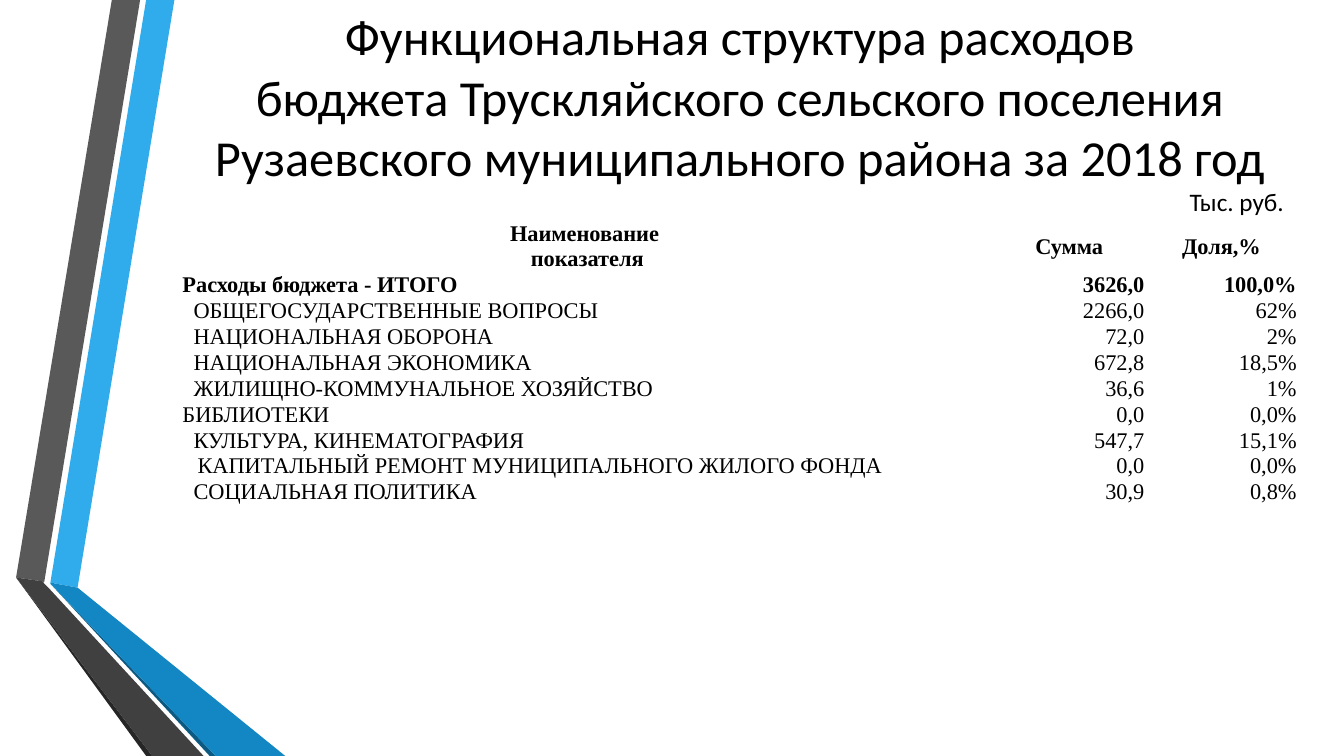
from lxml.etree import SubElement
from pptx import Presentation
from pptx.dml.color import RGBColor as Rgb
from pptx.enum.text import MSO_ANCHOR as Anchor, MSO_AUTO_SIZE as Auto, PP_ALIGN as Align
from pptx.oxml.ns import qn
from pptx.util import Inches, Pt

BLACK = Rgb(0, 0, 0)
SKY = Rgb(0x30, 0xAC, 0xEC)
BLUE = Rgb(0x12, 0x87, 0xC3)
NAVY = Rgb(0x0C, 0x5A, 0x82)
GRAY = Rgb(0x59, 0x59, 0x59)
DARK = Rgb(0x40, 0x40, 0x40)
COAL = Rgb(0x26, 0x26, 0x26)
WHITE = Rgb(0xFF, 0xFF, 0xFF)

BANDS = [
    (SKY, [(0.5, 5.78), (0.77, 5.83), (1.73, 0), (1.45, 0)]),
    (GRAY, [(1.39, 0), (1.11, 0), (0.16, 5.73), (0.44, 5.77)]),
    (COAL, [(0.16, 5.73), (1.45, 7.5), (1.51, 7.5)]),
    (NAVY, [(0.5, 5.79), (2.08, 7.5), (2.14, 7.5)]),
    (BLUE, [(0.5, 5.79), (2.14, 7.5), (2.83, 7.5), (0.77, 5.83), (0.5, 5.78)]),
    (DARK, [(2.02, 7.5), (0.48, 5.83), (0.43, 5.78), (0.44, 5.77), (0.16, 5.73), (1.51, 7.5)]),
]

TITLE = [
    "Функциональная структура расходов",
    "бюджета Трускляйского сельского поселения Рузаевского муниципального района за 2018 год",
]

HEAD = ["Наименование \nпоказателя", "Сумма", "Доля,%"]
FLUSH, STEP, DEEP = 0.01, 0.12, 0.16
ROWS = [
    (FLUSH, "Расходы бюджета - ИТОГО", "3626,0", "100,0%"),
    (STEP, "ОБЩЕГОСУДАРСТВЕННЫЕ ВОПРОСЫ", "2266,0", "62%"),
    (STEP, "НАЦИОНАЛЬНАЯ ОБОРОНА", "72,0", "2%"),
    (STEP, "НАЦИОНАЛЬНАЯ ЭКОНОМИКА", "672,8", "18,5%"),
    (STEP, "ЖИЛИЩНО-КОММУНАЛЬНОЕ ХОЗЯЙСТВО", "36,6", "1%"),
    (FLUSH, "БИБЛИОТЕКИ", "0,0", "0,0%"),
    (STEP, "КУЛЬТУРА, КИНЕМАТОГРАФИЯ", "547,7", "15,1%"),
    (DEEP, "КАПИТАЛЬНЫЙ РЕМОНТ МУНИЦИПАЛЬНОГО ЖИЛОГО ФОНДА", "0,0", "0,0%"),
    (STEP, "СОЦИАЛЬНАЯ ПОЛИТИКА", "30,9", "0,8%"),
]
WIDTHS = [8.05, 1.51, 1.51]
HEIGHTS = [0.46] + [0.17] * 8 + [0.2]


class Page:
    sans = "Calibri"
    serif = "Times New Roman"

    def __init__(self, slide):
        self.slide = slide
        self.shapes = slide.shapes

    def band(self, color, points):
        spots = [(Inches(x), Inches(y)) for x, y in points]
        pen = self.shapes.build_freeform(*spots[0], scale=1.0)
        pen.add_line_segments(spots[1:], close=True)
        shape = pen.convert_to_shape()
        shape.shadow.inherit = False
        shape.fill.solid()
        shape.fill.fore_color.rgb = color
        shape.line.fill.background()

    def runs(self, frame, lines, size, face, align, bold=False):
        para = frame.paragraphs[0]
        para.alignment = align
        for i, line in enumerate(lines):
            if i:
                para.add_line_break()
            run = para.add_run()
            run.text = line
            font = run.font
            font.size, font.name, font.bold = Pt(size), face, bold
            font.color.rgb = BLACK

    def text(self, box, lines, size, align, anchor=Anchor.TOP, wrap=True):
        frame = self.shapes.add_textbox(*map(Inches, box)).text_frame
        frame.auto_size = Auto.NONE if wrap else Auto.SHAPE_TO_FIT_TEXT
        frame.word_wrap = wrap
        frame.vertical_anchor = anchor
        self.runs(frame, lines, size, self.sans, align)

    def edge(self, cell):
        props = cell._tc.get_or_add_tcPr()
        for side in ("lnL", "lnR", "lnT", "lnB"):
            line = SubElement(props, qn("a:" + side), w=str(Pt(1)))
            fill = SubElement(line, qn("a:solidFill"))
            SubElement(fill, qn("a:srgbClr"), val=str(WHITE))

    def cell(self, cell, text, align, anchor, bold, left=FLUSH):
        self.edge(cell)
        cell.fill.background()
        cell.vertical_anchor = anchor
        cell.margin_left = Inches(left)
        cell.margin_right = cell.margin_top = Inches(0.01)
        cell.margin_bottom = 0
        self.runs(cell.text_frame, text.split("\n"), 16, self.serif, align, bold)

    def table(self, box):
        grid = self.shapes.add_table(len(HEIGHTS), len(WIDTHS), *map(Inches, box)).table
        grid.first_row = grid.horz_banding = False
        for col, width in zip(grid.columns, WIDTHS):
            col.width = Inches(width)
        for row, height in zip(grid.rows, HEIGHTS):
            row.height = Inches(height)
        for c, text in enumerate(HEAD):
            self.cell(grid.cell(0, c), text, Align.CENTER, Anchor.MIDDLE, True)
        for r, (left, *texts) in enumerate(ROWS, 1):
            for c, text in enumerate(texts):
                align = Align.RIGHT if c else Align.LEFT
                pad = FLUSH if c else left
                self.cell(grid.cell(r, c), text, align, Anchor.BOTTOM, r == 1, pad)


def main():
    deck = Presentation()
    deck.slide_width, deck.slide_height = Inches(13.33), Inches(7.5)
    page = Page(deck.slides.add_slide(deck.slide_layouts[6]))
    for color, points in BANDS:
        page.band(color, points)
    page.text((1.63, 0.09, 11.42, 1.73), TITLE, 36, Align.CENTER, Anchor.MIDDLE)
    page.table((1.8, 2.19, 11.07, 3.02))
    page.text((11.7, 1.8, 1.17, 0.4), ["Тыс. руб."], 18, Align.LEFT, wrap=False)
    deck.save("out.pptx")


if __name__ == "__main__":
    main()
